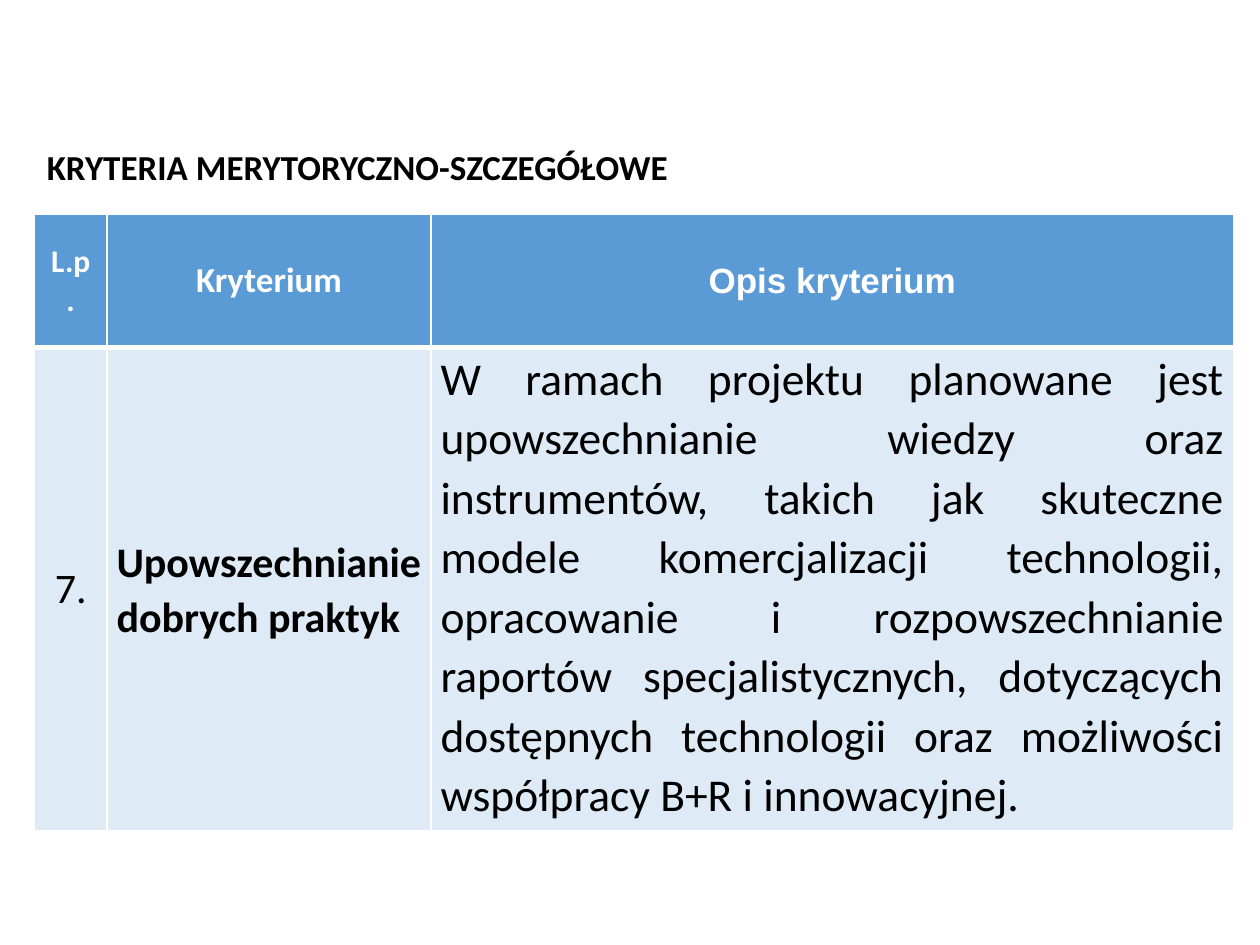
"""Build a slide with a table of detailed merit criteria."""
from dataclasses import dataclass

from lxml.etree import SubElement
from pptx import Presentation
from pptx.dml.color import RGBColor
from pptx.enum.text import MSO_ANCHOR as Anchor, MSO_AUTO_SIZE as AutoSize, PP_ALIGN as Align
from pptx.oxml.ns import qn
from pptx.util import Cm, Pt


@dataclass(frozen=True)
class Theme:
    """Colours, fonts and type sizes of the slide."""
    black: RGBColor = RGBColor(0x00, 0x00, 0x00)
    white: RGBColor = RGBColor(0xFF, 0xFF, 0xFF)
    header_fill: RGBColor = RGBColor(0x5B, 0x9B, 0xD5)
    body_fill: RGBColor = RGBColor(0xDE, 0xEB, 0xF7)
    font: str = "Calibri"
    header_font: str = "Arial"
    small: int = 18
    heading: int = 20
    body: int = 24
    description: int = 26


THEME = Theme()


@dataclass(frozen=True)
class CriterionCell:
    """Text and format of one table cell."""
    text: str
    size: int
    bold: bool = True
    font: str = THEME.font
    align: Align = Align.CENTER
    anchor: Anchor = Anchor.MIDDLE
    spacing: float | None = None
    tight: bool = False


HEADER = [
    CriterionCell("L.p.", THEME.small),
    CriterionCell("Kryterium", THEME.heading),
    CriterionCell("Opis kryterium", THEME.heading, font=THEME.header_font),
]
CRITERION = [
    CriterionCell("7.", THEME.body, bold=False),
    CriterionCell("Upowszechnianie dobrych praktyk", THEME.body,
                  align=Align.LEFT, spacing=1.07, tight=True),
    CriterionCell(
        "W ramach projektu planowane jest upowszechnianie wiedzy oraz "
        "instrumentów, takich jak skuteczne modele komercjalizacji technologii, "
        "opracowanie i rozpowszechnianie raportów specjalistycznych, dotyczących "
        "dostępnych technologii oraz możliwości współpracy B+R i innowacyjnej.",
        THEME.description, bold=False, align=Align.JUSTIFY,
        anchor=Anchor.TOP, spacing=1.07, tight=True),
]
COLUMN_WIDTHS = [Cm(1.47), Cm(6.53), Cm(16.18)]
ROW_HEIGHTS = [Cm(2.69), Cm(9.73)]


def write_text(frame, text: str, *, size: int, color: RGBColor, bold: bool = True,
               font: str = THEME.font, align: Align = Align.LEFT,
               anchor: Anchor = Anchor.MIDDLE, spacing: float | None = None) -> None:
    """Put one formatted paragraph into a text frame."""
    frame.vertical_anchor = anchor
    paragraph = frame.paragraphs[0]
    paragraph.alignment = align
    paragraph.line_spacing = spacing
    run = paragraph.add_run()
    run.text = text
    run.font.name = font
    run.font.size = Pt(size)
    run.font.bold = bold
    run.font.color.rgb = color


def add_borders(cell, **widths: float) -> None:
    """Draw white borders of the given point widths, keyed by side."""
    properties = cell._tc.get_or_add_tcPr()
    for side, width in widths.items():
        line = SubElement(properties, qn(f"a:ln{side}"), w=str(Pt(width)))
        fill = SubElement(line, qn("a:solidFill"))
        SubElement(fill, qn("a:srgbClr"), val=str(THEME.white))


def fill_row(table, index: int, cells: list[CriterionCell], fill: RGBColor,
             color: RGBColor, top: float, bottom: float) -> None:
    """Write and format one row of the table."""
    for column, content in enumerate(cells):
        cell = table.cell(index, column)
        write_text(cell.text_frame, content.text, size=content.size, color=color,
                   bold=content.bold, font=content.font, align=content.align,
                   spacing=content.spacing)
        cell.vertical_anchor = content.anchor
        if content.tight:
            cell.margin_left = cell.margin_right = Cm(0.19)
            cell.margin_top = cell.margin_bottom = 0
        add_borders(cell, L=1, R=1, T=top, B=bottom)
        cell.fill.solid()
        cell.fill.fore_color.rgb = fill


def add_criteria_table(slide) -> None:
    """Add the table of criteria."""
    table = slide.shapes.add_table(
        len(ROW_HEIGHTS), len(COLUMN_WIDTHS), Cm(0.69), Cm(4.32),
        sum(COLUMN_WIDTHS), sum(ROW_HEIGHTS)).table
    for column, width in zip(table.columns, COLUMN_WIDTHS):
        column.width = width
    for row, height in zip(table.rows, ROW_HEIGHTS):
        row.height = height
    fill_row(table, 0, HEADER, THEME.header_fill, THEME.white, top=1, bottom=3)
    fill_row(table, 1, CRITERION, THEME.body_fill, THEME.black, top=3, bottom=1)


def add_title(slide) -> None:
    """Place and write the slide title."""
    title = slide.shapes.title
    title.left, title.top, title.width, title.height = Cm(0.69), Cm(2.79), Cm(13.13), Cm(1.12)
    title.text_frame.word_wrap = False
    title.text_frame.auto_size = AutoSize.SHAPE_TO_FIT_TEXT
    write_text(title.text_frame, "KRYTERIA MERYTORYCZNO-SZCZEGÓŁOWE",
               size=THEME.heading, color=THEME.black)


def main() -> None:
    """Build and save the presentation."""
    presentation = Presentation()
    presentation.slide_width, presentation.slide_height = Cm(25.4), Cm(19.05)
    slide = presentation.slides.add_slide(presentation.slide_layouts[5])
    add_criteria_table(slide)
    add_title(slide)
    presentation.save("out.pptx")


if __name__ == "__main__":
    main()
